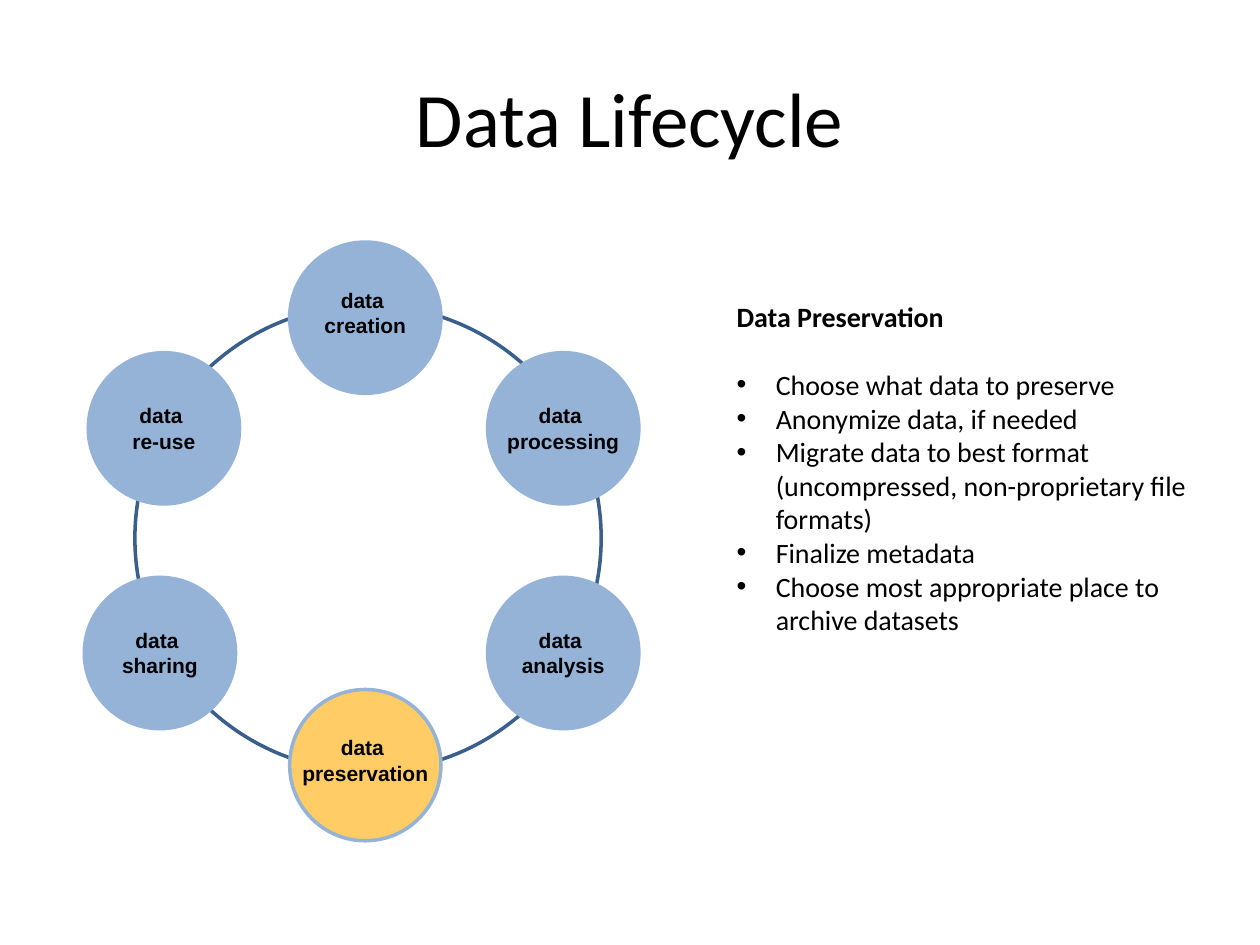
from lxml.etree import SubElement
from pptx import Presentation
from pptx.dml.color import RGBColor
from pptx.enum.shapes import MSO_SHAPE
from pptx.enum.text import MSO_ANCHOR, PP_ALIGN
from pptx.oxml.ns import qn
from pptx.util import Cm, Pt

BLACK = RGBColor(0x00, 0x00, 0x00)
RING_BLUE = RGBColor(0x3A, 0x5F, 0x8C)
STAGE_BLUE = RGBColor(0x95, 0xB3, 0xD7)
HIGHLIGHT = RGBColor(0xFF, 0xCC, 0x66)


def add_circle(left, top, size, line_color, fill_color=None):
    shape = slide.shapes.add_shape(
        MSO_SHAPE.OVAL, Cm(left), Cm(top), Cm(size), Cm(size))
    shape.shadow.inherit = False
    if fill_color is None:
        shape.fill.background()
    else:
        shape.fill.solid()
        shape.fill.fore_color.rgb = fill_color
    shape.line.color.rgb = line_color
    shape.line.width = Pt(2)


def style_paragraph(paragraph, font_name, size, bold=False, alignment=None):
    paragraph.alignment = alignment
    paragraph.font.name = font_name
    paragraph.font.size = Pt(size)
    paragraph.font.bold = bold
    paragraph.font.color.rgb = BLACK


presentation = Presentation()
presentation.slide_width = Cm(25.4)
presentation.slide_height = Cm(19.05)
slide = presentation.slides.add_slide(presentation.slide_layouts[6])

# Title
title = slide.shapes.add_textbox(Cm(1.27), Cm(0.76), Cm(22.86), Cm(3.18))
title.text_frame.word_wrap = True
title.text_frame.vertical_anchor = MSO_ANCHOR.MIDDLE
title.text_frame.text = "Data Lifecycle"
style_paragraph(title.text_frame.paragraphs[0], "Calibri", 44,
                alignment=PP_ALIGN.CENTER)

# Ring behind the stages
add_circle(2.72, 6.15, 9.4, RING_BLUE)

# Stages: name, circle left and top, label width and offset from circle top
STAGE_SIZE = 3.05
LABEL_HEIGHT = 1.28
stages = [
    ("creation", 5.84, 4.88, 2.18, 0.79),
    ("preservation", 5.84, 13.9, 3.07, 0.79),
    ("processing", 9.83, 7.11, 2.79, 0.89),
    ("analysis", 9.83, 11.64, 2.18, 0.89),
    ("re-use", 1.78, 7.11, 1.8, 0.89),
    ("sharing", 1.7, 11.64, 2.06, 0.89),
]
for name, left, top, label_width, label_offset in stages:
    fill_color = HIGHLIGHT if name == "preservation" else STAGE_BLUE
    add_circle(left, top, STAGE_SIZE, STAGE_BLUE, fill_color)
    label = slide.shapes.add_textbox(
        Cm(left + (STAGE_SIZE - label_width) / 2), Cm(top + label_offset),
        Cm(label_width), Cm(LABEL_HEIGHT))
    label.text_frame.word_wrap = False
    label.text_frame.text = f"data \n{name}"
    for paragraph in label.text_frame.paragraphs:
        style_paragraph(paragraph, "Arial", 12, True, PP_ALIGN.CENTER)

# Details of the highlighted stage
details = slide.shapes.add_textbox(Cm(14.6), Cm(5.92), Cm(10.16), Cm(8.76))
details.text_frame.word_wrap = True
heading = details.text_frame.paragraphs[0]
heading.text = "Data Preservation"
heading.space_after = Pt(19.5)
style_paragraph(heading, "Calibri", 16, True)

tasks = [
    "Choose what data to preserve",
    "Anonymize data, if needed",
    "Migrate data to best format (uncompressed, non-proprietary file formats)",
    "Finalize metadata",
    "Choose most appropriate place to archive datasets",
]
for task in tasks:
    paragraph = details.text_frame.add_paragraph()
    paragraph.text = task
    # Hanging bullet, placed before the font defaults
    properties = paragraph._p.get_or_add_pPr()
    properties.set("marL", str(Cm(0.79)))
    properties.set("indent", str(-Cm(0.79)))
    SubElement(properties, qn("a:buFont"), typeface="Arial")
    SubElement(properties, qn("a:buChar"), char="•")
    style_paragraph(paragraph, "Calibri", 16)

presentation.save("out.pptx")
